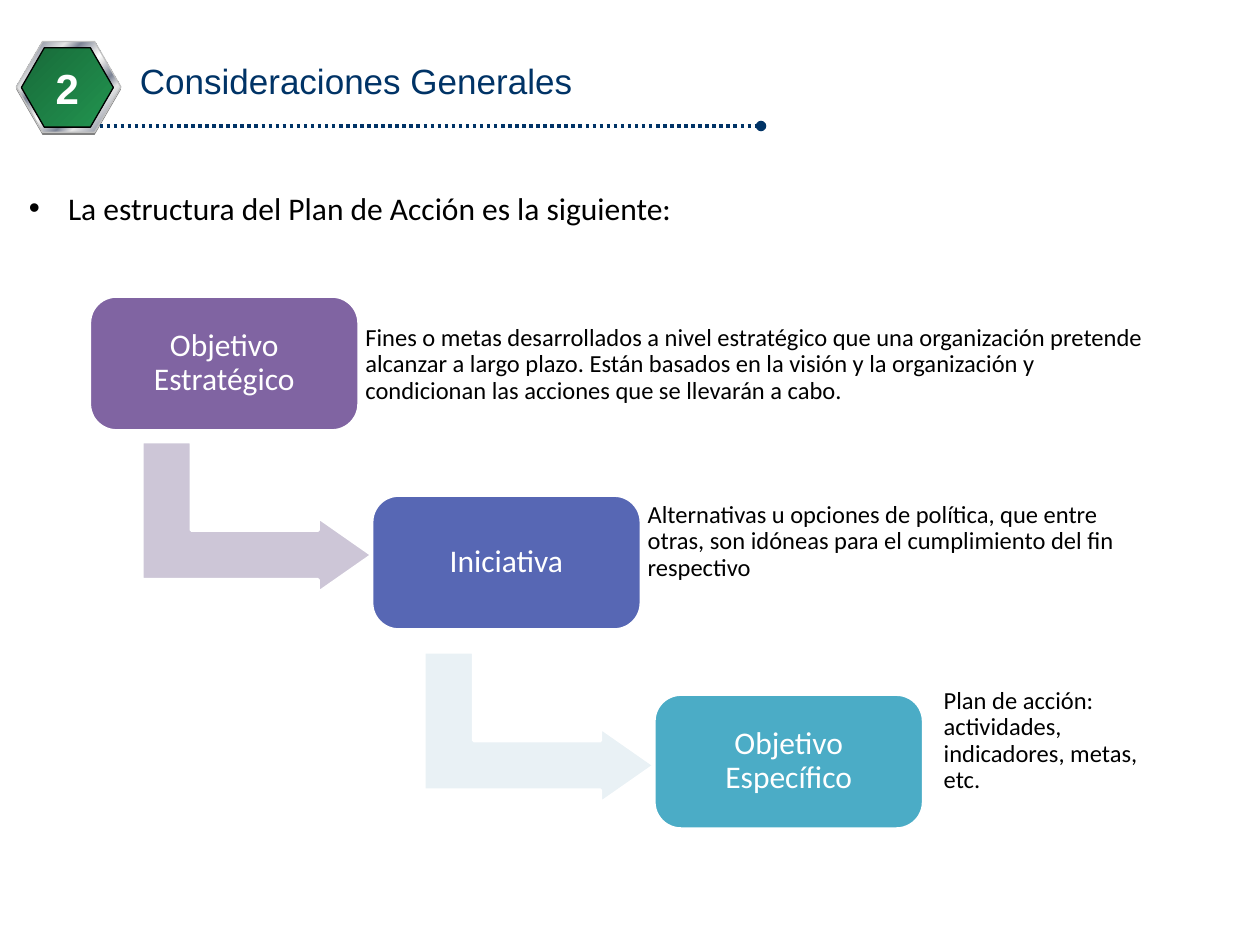
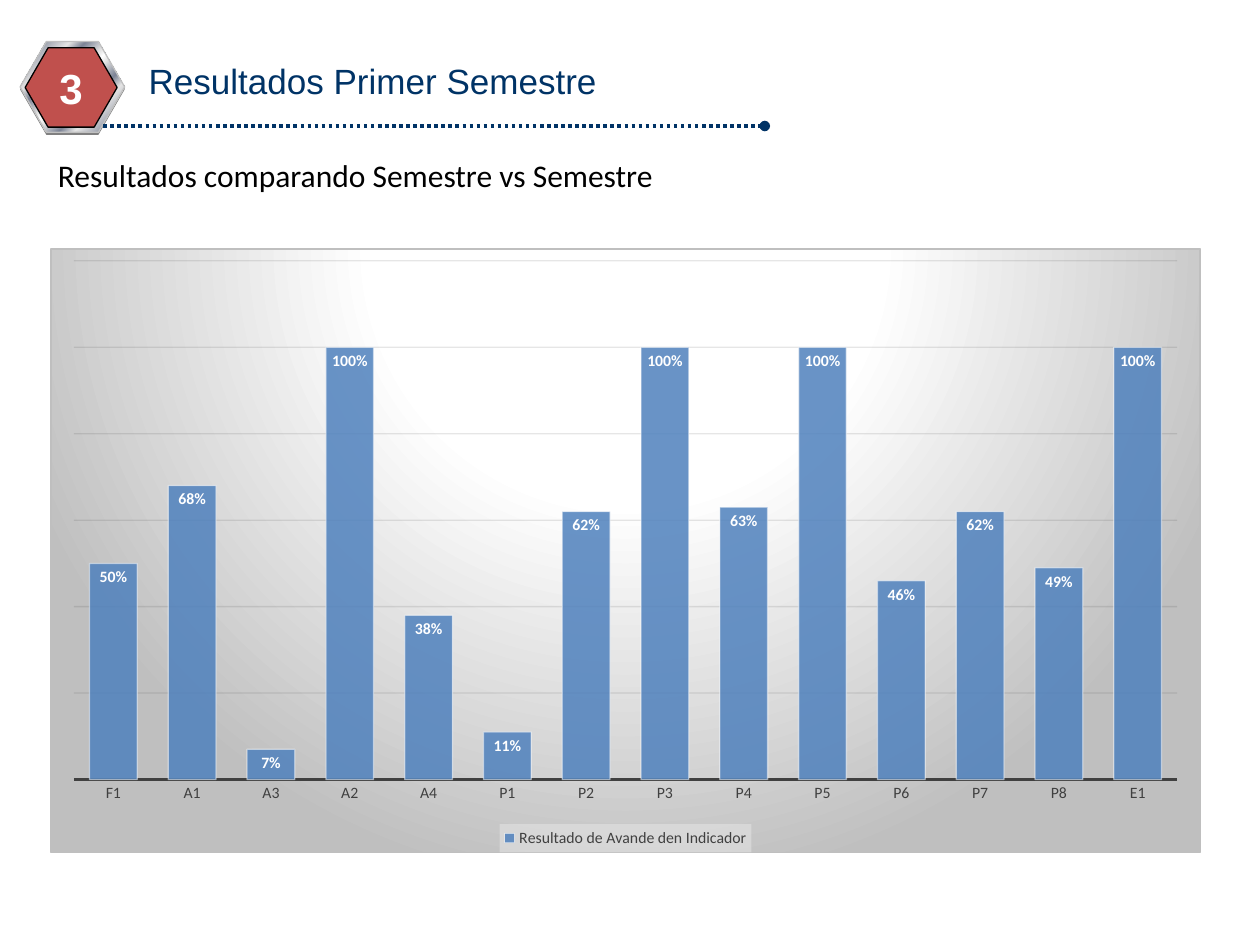
"""Build two slides: the structure of the action plan and the first semester results."""
from dataclasses import dataclass

from lxml import etree
from pptx import Presentation
from pptx.chart.data import CategoryChartData
from pptx.dml.color import RGBColor
from pptx.enum.chart import XL_CHART_TYPE, XL_LABEL_POSITION, XL_LEGEND_POSITION, XL_TICK_MARK
from pptx.enum.dml import MSO_LINE
from pptx.enum.shapes import MSO_CONNECTOR, MSO_SHAPE
from pptx.enum.text import MSO_ANCHOR, MSO_AUTO_SIZE, PP_ALIGN
from pptx.oxml import parse_xml
from pptx.oxml.ns import nsdecls, qn
from pptx.util import Inches, Pt

HEXAGON = MSO_SHAPE.HEXAGON
BENT_ARROW = MSO_SHAPE.BENT_UP_ARROW
ROUNDED = MSO_SHAPE.ROUNDED_RECTANGLE
LEFT, CENTER, JUSTIFY = PP_ALIGN.LEFT, PP_ALIGN.CENTER, PP_ALIGN.JUSTIFY
TOP, MIDDLE = MSO_ANCHOR.TOP, MSO_ANCHOR.MIDDLE
NO_AUTOFIT = MSO_AUTO_SIZE.NONE


@dataclass(frozen=True)
class Theme:
    heading_font: str = "Arial"
    text_font: str = "Calibri"
    navy: RGBColor = RGBColor.from_string("003366")
    black: RGBColor = RGBColor.from_string("000000")
    white: RGBColor = RGBColor.from_string("FFFFFF")
    shade: RGBColor = RGBColor.from_string("808080")
    silver: RGBColor = RGBColor.from_string("C0C0C0")
    axis: RGBColor = RGBColor.from_string("404040")
    grid: RGBColor = RGBColor.from_string("0D0D0D")
    bar: RGBColor = RGBColor.from_string("4F81BD")
    metal: tuple = ((0, "E6E6E6"), (8, "7D8496"), (26, "E6E6E6"), (34, "7D8496"),
                    (46, "E6E6E6"), (50, "FFFFFF"), (54, "E6E6E6"), (66, "7D8496"),
                    (74, "E6E6E6"), (93, "7D8496"), (100, "E6E6E6"))
    green: tuple = ((0, "186A39"), (100, "229450"))
    red: str = "C0504D"
    glow: tuple = ((0, "FFFFFF"), (39, "FFFFFF"), (100, "BFBFBF"))
    title: Pt = Pt(20)
    number: Pt = Pt(24)
    body: Pt = Pt(18)
    detail: Pt = Pt(14)
    chart: Pt = Pt(9)


theme = Theme()


def gradient_xml(stops, direction):
    """Return the XML of a gradient fill."""
    marks = "".join(f'<a:gs pos="{place * 1000}"><a:srgbClr val="{color}"/></a:gs>'
                    for place, color in stops)
    return f'<a:gradFill {nsdecls("a")}><a:gsLst>{marks}</a:gsLst>{direction}</a:gradFill>'


def add_block(page, kind, place, fill, line=None, weight=0.75):
    """Add a preset shape with a solid or a diagonal gradient fill."""
    block = page.shapes.add_shape(kind, *(Inches(length) for length in place))
    block.shadow.inherit = False
    if isinstance(fill, tuple) and not isinstance(fill, RGBColor):
        block.fill.background()
        properties = block.fill._xPr
        diagonal = '<a:lin ang="2700000" scaled="0"/>'
        properties.replace(properties.find(qn("a:noFill")),
                           parse_xml(gradient_xml(fill, diagonal)))
    else:
        block.fill.solid()
        block.fill.fore_color.rgb = fill
    if line is None:
        block.line.fill.background()
    else:
        block.line.color.rgb = line
        block.line.width = Pt(weight)
    return block


deck = Presentation()
deck.slide_width, deck.slide_height = Inches(10), Inches(7.5)

sections = [
    ("2", "Consideraciones Generales", theme.green, 0, 1.01,
     "La estructura del Plan de Acción es la siguiente:", (0.13, 1.45, 9.02, 0.6), "•", LEFT),
    ("3", "Resultados Primer Semestre", RGBColor.from_string(theme.red), 0.03, 1.08,
     "Resultados comparando Semestre vs Semestre", (0.36, 1.19, 9.16, 0.6), None, JUSTIFY),
]
pages = []
for number, heading, badge_fill, shift, title_left, lead, lead_place, bullet, align in sections:
    page = deck.slides.add_slide(deck.slide_layouts[1])
    pages.append(page)
    title, body = page.shapes.title, page.placeholders[1]
    for box, place, text in ((title, (title_left, 0.42, 5, 0.44), heading),
                             (body, lead_place, lead)):
        box.left, box.top, box.width, box.height = (Inches(length) for length in place)
        box.text_frame.text = text
        box.text_frame.word_wrap = True
        box.text_frame.auto_size = NO_AUTOFIT
        box.text_frame.vertical_anchor = TOP

    para = title.text_frame.paragraphs[0]
    para.alignment = LEFT
    para.font.name, para.font.size = theme.heading_font, theme.title
    para.font.color.rgb = theme.navy

    para = body.text_frame.paragraphs[0]
    layout = para._p.get_or_add_pPr()
    indent = Inches(0.31) if bullet else 0
    layout.set("marL", str(indent))
    layout.set("indent", str(-indent))
    if bullet:
        etree.SubElement(layout, qn("a:buFont"), typeface=theme.heading_font)
        etree.SubElement(layout, qn("a:buChar"), char=bullet)
    else:
        etree.SubElement(layout, qn("a:buNone"))
    para.alignment = align
    para.space_before = Pt(0)
    para.font.name, para.font.size = theme.text_font, theme.body
    para.font.color.rgb = theme.black

    badge_layers = [
        ((0.13 + shift, 0.35, 0.83, 0.72), theme.shade, None),
        ((0.13 + shift, 0.33, 0.83, 0.72), theme.metal, theme.silver),
        ((0.17 + shift, 0.38, 0.73, 0.63), badge_fill, theme.black),
    ]
    for place, fill, line in badge_layers:
        badge = add_block(page, HEXAGON, place, fill, line)
        badge.adjustments[0] = 0.289
    frame = badge.text_frame
    frame.margin_left = frame.margin_right = frame.margin_top = frame.margin_bottom = 0
    frame.word_wrap = False
    frame.vertical_anchor = MIDDLE
    frame.text = number
    para = frame.paragraphs[0]
    para.alignment = CENTER
    para.font.name, para.font.size, para.font.bold = theme.heading_font, theme.number, True
    para.font.color.rgb = theme.white

    rule = page.shapes.add_connector(MSO_CONNECTOR.STRAIGHT, Inches(0.79 + shift), Inches(1),
                                     Inches(6.04 + shift), Inches(1))
    rule.line.color.rgb = theme.navy
    rule.line.width = Pt(2)
    rule.line.dash_style = MSO_LINE.ROUND_DOT
    etree.SubElement(rule.line._ln, qn("a:tailEnd"), type="oval")
    etree.SubElement(rule._element.spPr, qn("a:effectLst"))

plan_page, results_page = pages

steps = [
    ("Objetivo Estratégico", "8064A2", "CDC6D7", 6.36, 1.49, 0.04,
     "Fines o metas desarrollados a nivel estratégico que una organización pretende alcanzar "
     "a largo plazo. Están basados en la visión y la organización y condicionan las acciones "
     "que se llevarán a cabo."),
    ("Iniciativa", "5767B4", "E9F1F5", 4.12, 1.14, 0.04,
     "Alternativas u opciones de política, que entre otras, son idóneas para el cumplimiento "
     "del fin respectivo"),
    ("Objetivo Específico", "4BACC6", None, 1.97, 1.14, 0.15,
     "Plan de acción: actividades, indicadores, metas, etc."),
]
for index, (name, color, arrow_color, width, height, inset, detail) in enumerate(steps):
    left, top = 0.71 + 2.24 * index, 2.35 + 1.58 * index
    if arrow_color:
        arrow = add_block(plan_page, BENT_ARROW, (left + 0.73, 3.19 + 1.67 * index, 1.2, 1.83),
                          RGBColor.from_string(arrow_color), theme.white, 2)
        arrow.rotation = 90
        for position, value in enumerate((0.328, 0.25, 0.358)):
            arrow.adjustments[position] = value
    step = add_block(plan_page, ROUNDED, (left, top, 2.14, 1.07),
                     RGBColor.from_string(color), theme.white, 2)
    step.adjustments[0] = 0.2
    note = plan_page.shapes.add_textbox(Inches(left + 2.15), Inches(top - 0.2),
                                        Inches(width), Inches(height))
    for box, text, margin, align, size, ink in (
            (step, name, 0.23, CENTER, theme.body, theme.white),
            (note, detail, inset, LEFT, theme.detail, theme.black)):
        frame = box.text_frame
        frame.margin_left = frame.margin_right = Inches(margin)
        frame.margin_top = frame.margin_bottom = Inches(margin)
        frame.word_wrap = True
        frame.vertical_anchor = MIDDLE
        frame.text = text
        para = frame.paragraphs[0]
        para.alignment = align
        para.line_spacing = 0.9
        para.font.name, para.font.size = theme.text_font, size
        para.font.color.rgb = ink

results = {"F1": 0.5, "A1": 0.68, "A3": 0.07, "A2": 1, "A4": 0.38, "P1": 0.11, "P2": 0.62,
           "P3": 1, "P4": 0.63, "P5": 1, "P6": 0.46, "P7": 0.62, "P8": 0.49, "E1": 1}
data = CategoryChartData(number_format="0%")
data.categories = list(results)
data.add_series("Resultado de Avande den Indicador", list(results.values()))
chart = results_page.shapes.add_chart(XL_CHART_TYPE.COLUMN_CLUSTERED, Inches(0.4), Inches(1.97),
                                      Inches(9.13), Inches(4.8), data).chart
chart.has_title = False
chart.font.name, chart.font.size = theme.text_font, theme.chart
chart.font.color.rgb = theme.axis
circle = '<a:path path="circle"><a:fillToRect l="50000" t="-80000" r="50000" b="180000"/></a:path>'
chart._chartSpace.find(qn("c:txPr")).addprevious(parse_xml(
    f'<c:spPr {nsdecls("c", "a")}>{gradient_xml(theme.glow, circle)}<a:ln w="9525">'
    '<a:solidFill><a:srgbClr val="BFBFBF"/></a:solidFill></a:ln></c:spPr>'))

chart.has_legend = True
legend = chart.legend
legend.position = XL_LEGEND_POSITION.BOTTOM
legend.include_in_layout = False
legend.font.name, legend.font.size = theme.text_font, theme.chart
legend.font.color.rgb = theme.axis
legend._element.find(qn("c:txPr")).addprevious(parse_xml(
    f'<c:spPr {nsdecls("c", "a")}><a:solidFill><a:srgbClr val="F2F2F2">'
    '<a:alpha val="39000"/></a:srgbClr></a:solidFill></c:spPr>'))

categories, values = chart.category_axis, chart.value_axis
categories.major_tick_mark = XL_TICK_MARK.NONE
categories.format.line.color.rgb = theme.axis
categories.format.line.width = Pt(1.5)
values.visible = False
values.minimum_scale, values.maximum_scale, values.major_unit = 0, 1.2, 0.2
values.has_major_gridlines = True
grid_line = values.major_gridlines.format.line
grid_line.color.rgb = theme.grid
grid_line.width = Pt(0.75)

plot = chart.plots[0]
plot.gap_width = 65
plot.vary_by_categories = False
bars = plot.series[0]
bars.format.fill.solid()
bars.format.fill.fore_color.rgb = theme.bar
bars.format.line.color.rgb = theme.white
bars.format.line.width = Pt(0.75)
for fill, opacity in ((bars.format.fill._xPr, 85), (bars.format.line._ln, 50),
                      (grid_line._ln, 10)):
    tint = fill.find(qn("a:solidFill")).find(qn("a:srgbClr"))
    etree.SubElement(tint, qn("a:alpha"), val=str(opacity * 1000))
labels = bars.data_labels
labels.show_value = True
labels.position = XL_LABEL_POSITION.INSIDE_END
labels.number_format, labels.number_format_is_linked = "0%", False
labels.font.name, labels.font.size, labels.font.bold = theme.text_font, theme.chart, True
labels.font.color.rgb = theme.white

deck.save("out.pptx")
